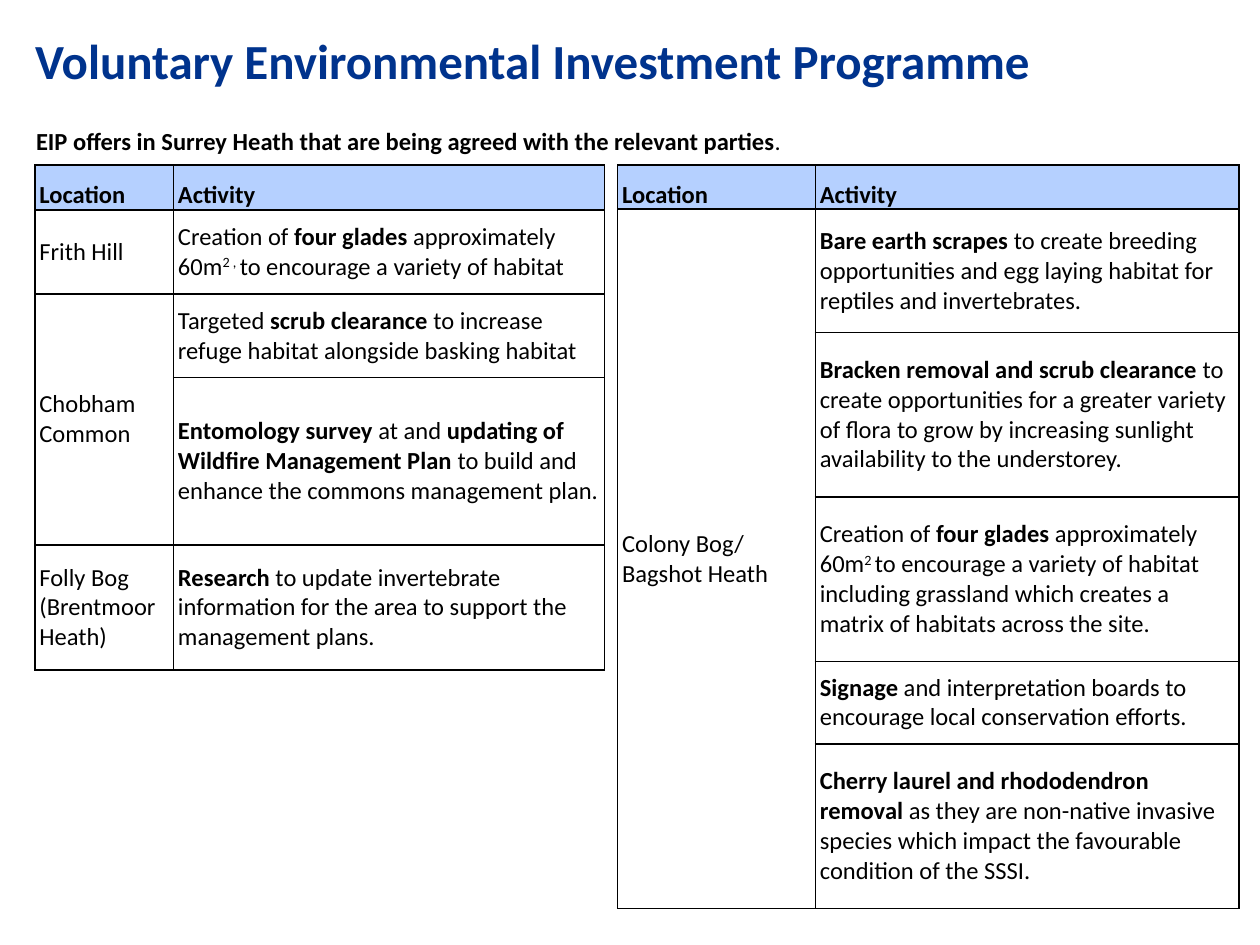
from lxml.etree import SubElement
from pptx import Presentation
from pptx.dml.color import RGBColor
from pptx.enum.text import MSO_ANCHOR, MSO_AUTO_SIZE, PP_ALIGN
from pptx.oxml.ns import qn
from pptx.util import Pt

NAVY = RGBColor(0x00, 0x33, 0x8D)
BLACK = RGBColor(0x00, 0x00, 0x00)
PALE_BLUE = RGBColor(0xB5, 0xD0, 0xFF)
FONT = "Calibri"
BOLD, SUPER = "bold", "super"

WEST_SITES = [
    ("Frith Hill", [
        [("Creation of ",), ("four glades ", BOLD), ("approximately 60m",),
         ("2 , ", SUPER), ("to encourage a variety of habitat",)],
    ]),
    ("Chobham Common", [
        [("Targeted ",), ("scrub clearance ", BOLD),
         ("to increase refuge habitat alongside basking habitat",)],
        [("Entomology survey ", BOLD), ("at and ",),
         ("updating of Wildfire Management Plan ", BOLD),
         ("to build and enhance the commons management plan.",)],
    ]),
    ("Folly Bog (Brentmoor Heath)", [
        [("Research", BOLD),
         (" to update invertebrate information for the area to support the "
          "management plans.",)],
    ]),
]
COLONY_BOG = [
    ("Colony Bog/ Bagshot Heath", [
        [("Bare earth scrapes ", BOLD),
         ("to create breeding opportunities and egg laying habitat for "
          "reptiles and invertebrates.",)],
        [("Bracken removal and scrub clearance ", BOLD),
         ("to create opportunities for a greater variety of flora to grow by "
          "increasing sunlight availability to the understorey.",)],
        [("Creation of ",), ("four glades ", BOLD), ("approximately 60m",),
         ("2 ", SUPER),
         ("to encourage a variety of habitat including grassland which "
          "creates a matrix of habitats across the site.",)],
        [("Signage", BOLD),
         (" and interpretation boards to encourage local conservation efforts.",)],
        [("Cherry laurel and rhododendron removal ", BOLD),
         ("as they are non-native invasive species which impact the "
          "favourable condition of the SSSI.",)],
    ]),
]


def set_font(font, size, color=BLACK, bold=False):
    """Apply the slide's typeface with a size, colour and weight."""
    font.name, font.size, font.bold = FONT, Pt(size), bold
    font.color.rgb = color


def add_runs(p, runs):
    """Write (text, style) runs into a paragraph."""
    for text, *style in runs:
        r = p.add_run()
        r.text = text
        if BOLD in style:
            r.font.bold = True
        if SUPER in style:
            r._r.get_or_add_rPr().set("baseline", "30000")


def add_borders(cell):
    """Draw a thin black line on every side of a cell."""
    tcPr = cell._tc.get_or_add_tcPr()
    for side in ("lnL", "lnR", "lnT", "lnB"):
        ln = SubElement(tcPr, qn(f"a:{side}"), w=str(Pt(1)))
        fill = SubElement(ln, qn("a:solidFill"))
        SubElement(fill, qn("a:srgbClr"), val=str(BLACK))


def fill_cell(cell, runs, header=False):
    """Write a header or body cell."""
    cell.vertical_anchor = MSO_ANCHOR.MIDDLE
    p = cell.text_frame.paragraphs[0]
    if header:
        p.line_spacing = 1.5
    set_font(p.font, 14, bold=header)
    add_runs(p, runs)


def add_title(slide, x, y, w, h):
    """Place the slide title."""
    sp = slide.shapes.title
    sp.left, sp.top, sp.width, sp.height = Pt(x), Pt(y), Pt(w), Pt(h)
    tf = sp.text_frame
    tf.margin_left = tf.margin_right = tf.margin_top = tf.margin_bottom = 0
    tf.vertical_anchor = MSO_ANCHOR.MIDDLE
    tf.auto_size = MSO_AUTO_SIZE.NONE
    p = tf.paragraphs[0]
    p.alignment = PP_ALIGN.LEFT
    set_font(p.font, 28, NAVY, bold=True)
    add_runs(p, [("Voluntary Environmental Investment Programme",)])


def add_intro(slide, x, y, w, h):
    """Place the line that introduces the tables."""
    tf = slide.shapes.add_textbox(Pt(x), Pt(y), Pt(w), Pt(h)).text_frame
    tf.word_wrap = True
    p = tf.paragraphs[0]
    set_font(p.font, 14, bold=True)
    add_runs(p, [("EIP offers in Surrey Heath that are being agreed with the "
                  "relevant parties",), (".",)])
    p.runs[-1].font.size = Pt(11)


def add_site_table(slide, x, y, col_widths, row_heights, sites):
    """Place a table of activities grouped by location."""
    table = slide.shapes.add_table(
        len(row_heights), len(col_widths), Pt(x), Pt(y),
        Pt(sum(col_widths)), Pt(sum(row_heights))).table
    table.first_row = table.horz_banding = False
    for col, width in zip(table.columns, col_widths):
        col.width = Pt(width)
    for row, height in zip(table.rows, row_heights):
        row.height = Pt(height)
    for cell in table.iter_cells():
        cell.margin_left = cell.margin_right = Pt(2.5)
        cell.margin_top = cell.margin_bottom = 0
        add_borders(cell)
        cell.fill.background()
    for cell, label in zip(table.rows[0].cells, ("Location", "Activity")):
        cell.fill.solid()
        cell.fill.fore_color.rgb = PALE_BLUE
        fill_cell(cell, [(label,)], header=True)
    i = 1
    for location, activities in sites:
        last = i + len(activities) - 1
        if last > i:
            table.cell(i, 0).merge(table.cell(last, 0))
        fill_cell(table.cell(i, 0), [(location,)])
        for i, runs in enumerate(activities, i):
            fill_cell(table.cell(i, 1), runs)
        i += 1


def main():
    """Build and save the slide."""
    prs = Presentation()
    prs.slide_width, prs.slide_height = Pt(720), Pt(540)
    slide = prs.slides.add_slide(prs.slide_layouts[5])
    add_title(slide, 20, 0, 664, 68)
    add_site_table(slide, 20, 94.3, (79.2, 246.2),
                   (25.2, 48, 48, 95.5, 71.5), WEST_SITES)
    add_intro(slide, 13.5, 68.5, 450, 46)
    add_site_table(slide, 353, 94.3, (113, 242),
                   (25.2, 70.5, 94, 94, 47, 94), COLONY_BOG)
    prs.save("out.pptx")


if __name__ == "__main__":
    main()
